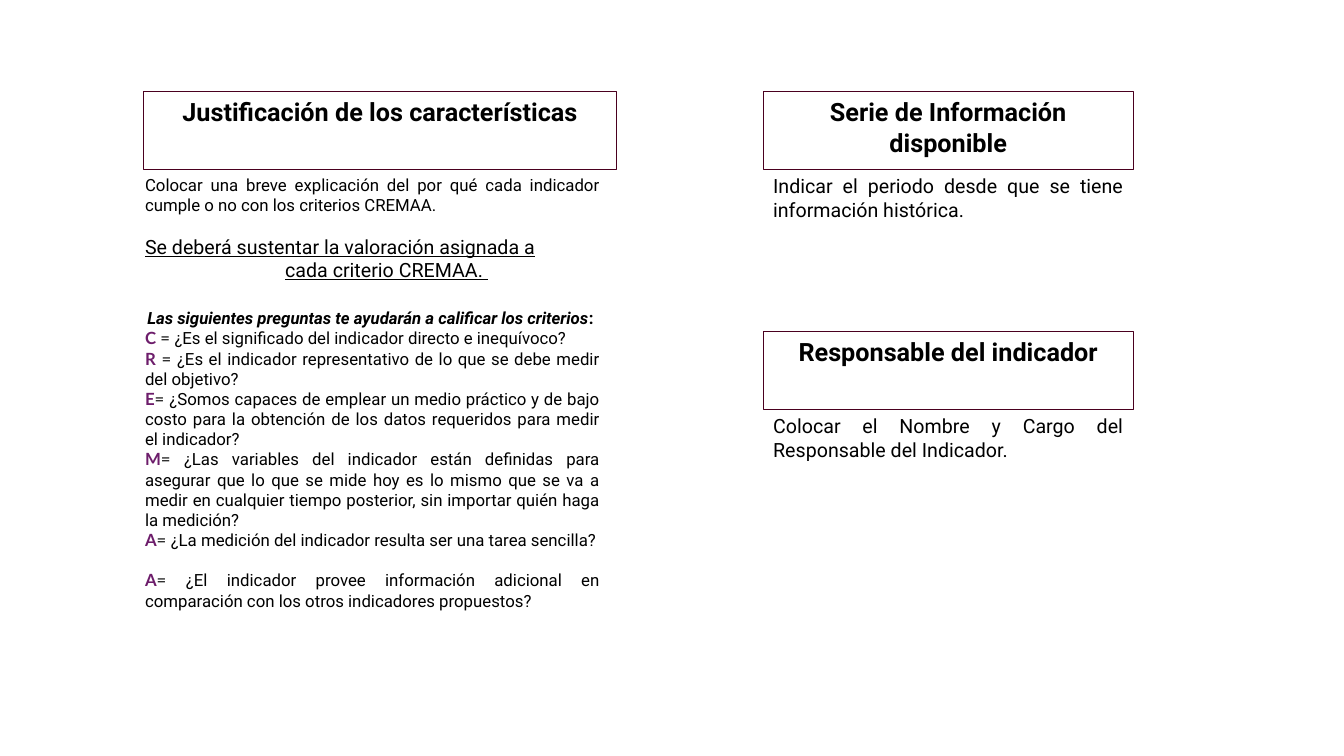
from lxml.etree import SubElement
from pptx import Presentation
from pptx.dml.color import RGBColor
from pptx.enum.shapes import MSO_SHAPE
from pptx.enum.text import MSO_ANCHOR, PP_ALIGN
from pptx.oxml.ns import qn
from pptx.util import Inches, Pt


def color(value):
    return RGBColor.from_string(value)


class CriteriaSlide:
    body_font = "Roboto"
    letter_font = "Lato"
    ink = "000000"
    accent = "6D1D6B"
    border = "4A001F"

    def __init__(self, presentation):
        self.slide = presentation.slides.add_slide(presentation.slide_layouts[6])

    def prepare(self, frame):
        frame.word_wrap = True
        frame.vertical_anchor = MSO_ANCHOR.TOP
        return frame

    def heading(self, left, top, width, text):
        shape = self.slide.shapes.add_shape(
            MSO_SHAPE.RECTANGLE, Inches(left), Inches(top), Inches(width), Inches(0.77))
        shape.shadow.inherit = False
        shape.fill.background()
        shape.line.color.rgb = color(self.border)
        shape.line.width = Pt(0.75)
        paragraph = self.prepare(shape.text_frame).paragraphs[0]
        paragraph.alignment = PP_ALIGN.CENTER
        self.run(paragraph, text, 18, bold=True)

    def text_box(self, left, top, width, height):
        shape = self.slide.shapes.add_textbox(
            Inches(left), Inches(top), Inches(width), Inches(height))
        return self.prepare(shape.text_frame)

    def paragraph(self, frame, alignment=PP_ALIGN.JUSTIFY, before=0):
        paragraph = frame.paragraphs[0]
        if paragraph.runs:
            paragraph = frame.add_paragraph()
        paragraph.alignment = alignment
        if before:
            paragraph.space_before = Pt(before)
        return paragraph

    def run(self, paragraph, text, size=12, name=None, ink=None,
            bold=False, italic=False, underline=False):
        run = paragraph.add_run()
        run.text = text
        font = run.font
        font.size = Pt(size)
        font.name = name or self.body_font
        font.color.rgb = color(ink or self.ink)
        font.bold, font.italic, font.underline = bold, italic, underline

    def tab_stops(self, paragraph, positions):
        tab_list = SubElement(paragraph._p.get_or_add_pPr(), qn("a:tabLst"))
        for position in positions:
            SubElement(tab_list, qn("a:tab"), pos=str(Inches(position)), algn="l")

    def line_break(self, paragraph, size):
        paragraph.add_line_break()
        line_break = paragraph._p.findall(qn("a:br"))[-1]
        SubElement(line_break, qn("a:rPr"), sz=str(size * 100))

    def instruction(self, frame):
        paragraph = self.paragraph(frame, PP_ALIGN.LEFT, 14.4)
        self.tab_stops(paragraph, (1.1, 1.39, 4.49))
        self.run(paragraph, "Se deberá sustentar la valoración asignada a\t", 14, underline=True)
        self.line_break(paragraph, 14)
        self.run(paragraph, "\t", 14)
        self.run(paragraph, "\tcada criterio CREMAA. ", 14, underline=True)

    def question(self, frame, letter, equals, text, before=0):
        paragraph = self.paragraph(frame, before=before)
        self.run(paragraph, letter, name=self.letter_font, ink=self.accent, bold=True)
        self.run(paragraph, equals, name=self.letter_font)
        self.run(paragraph, text)


QUESTIONS = (
    ("C", " = ", "¿Es el significado del indicador directo e inequívoco?"),
    ("R", " = ", "¿Es el indicador representativo de lo que se debe medir del objetivo?"),
    ("E", "= ", "¿Somos capaces de emplear un medio práctico y de bajo costo para la "
                "obtención de los datos requeridos para medir el indicador?"),
    ("M", "= ", "¿Las variables del indicador están definidas para asegurar que lo que se "
                "mide hoy es lo mismo que se va a medir en cualquier tiempo posterior, "
                "sin importar quién haga la medición?"),
    ("A", "= ", "¿La medición del indicador resulta ser una tarea sencilla?"),
    ("A", "= ", "¿El indicador provee información adicional en comparación con los otros "
                "indicadores propuestos?", 14.4),
)

SIDE_BLOCKS = (
    (0.91, "Serie de Información disponible",
     "Indicar el periodo desde que se tiene información histórica."),
    (3.29, "Responsable del indicador",
     "Colocar el Nombre y Cargo del Responsable del Indicador."),
)


def main():
    presentation = Presentation()
    presentation.slide_width = Inches(13.33)
    presentation.slide_height = Inches(7.5)
    page = CriteriaSlide(presentation)

    page.heading(1.42, 0.91, 4.7, "Justificación de los características")
    frame = page.text_box(1.34, 1.68, 4.71, 4.07)
    page.run(page.paragraph(frame),
             "Colocar una breve explicación del por qué cada indicador cumple o no "
             "con los criterios CREMAA.")
    page.instruction(frame)
    guide = page.paragraph(frame, PP_ALIGN.CENTER, 18.75)
    page.run(guide, "Las siguientes preguntas te ayudarán a calificar los criterios",
             bold=True, italic=True)
    page.run(guide, ": ", bold=True)
    for question in QUESTIONS:
        page.question(frame, *question)

    for top, title, text in SIDE_BLOCKS:
        page.heading(7.57, top, 3.67, title)
        frame = page.text_box(7.57, top + 0.77, 3.67, 0.57)
        page.run(page.paragraph(frame), text, 14)

    presentation.save("out.pptx")


if __name__ == "__main__":
    main()
